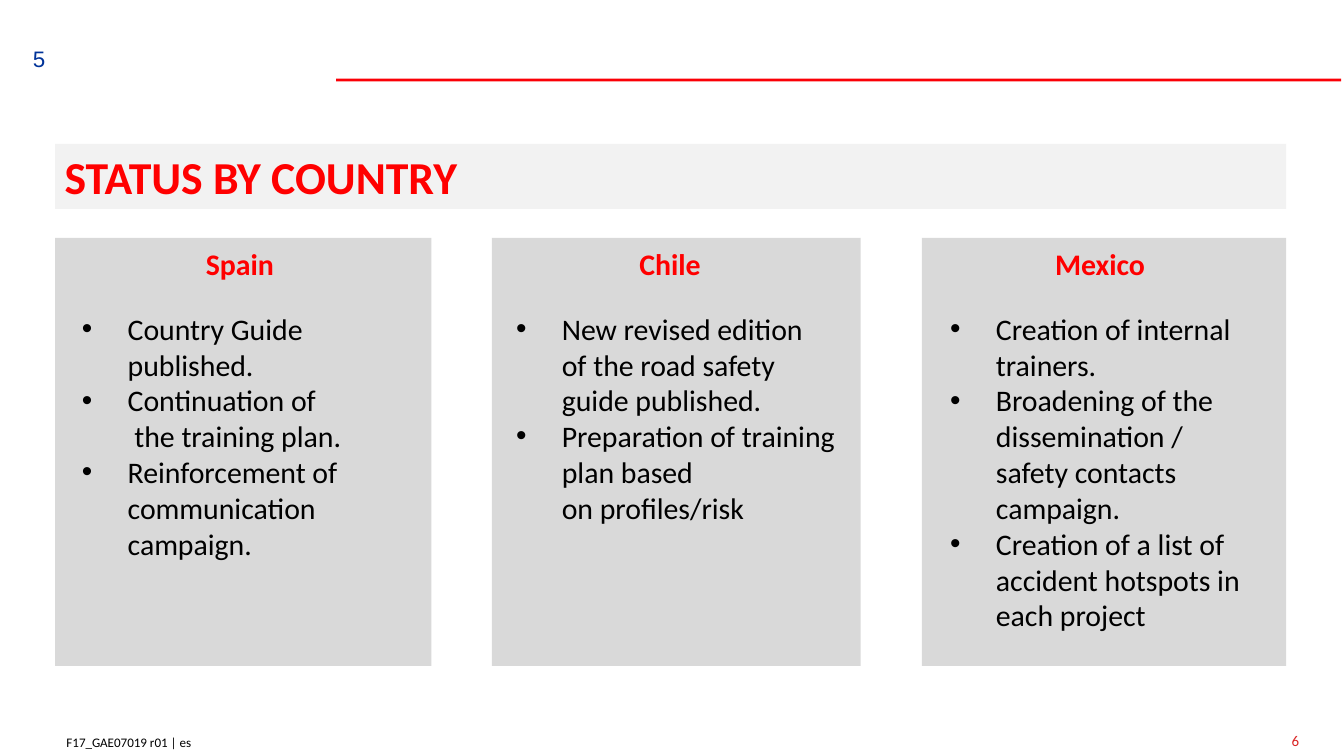
"""Builds the slide on status by country: a title bar and three cards."""
from copy import deepcopy
from dataclasses import dataclass
from typing import Any

from lxml import etree
from pptx import Presentation
from pptx import util as u
from pptx.dml.color import RGBColor
from pptx.enum import shapes, text
from pptx.oxml.ns import qn

PX = 4572


@dataclass(frozen=True)
class Theme:
    red: str = "FF0000"
    rule: str = "FB0007"
    page: str = "DA2424"
    blue: str = "003399"
    ink: str = "000000"
    card: str = "D9D9D9"
    bar: str = "F2F2F2"
    font: str = "Calibri"
    sans: str = "Arial"
    title: float = 24.5
    body: float = 16
    mark: float = 12
    num: float = 8
    foot: float = 7


@dataclass(frozen=True)
class Box:
    x: int
    y: int
    w: int
    h: int


@dataclass(frozen=True)
class Card:
    name: str
    box: Box
    wide: int
    tall: int
    slot: int
    items: tuple[str, ...]


T = Theme()
LEFT = text.PP_ALIGN.LEFT
RIGHT = text.PP_ALIGN.RIGHT
MID = text.PP_ALIGN.CENTER

CARDS = (
    Card("Spain", Box(82, 354, 560, 637), 520, 398, 1, (
        "Country Guide published.",
        "Continuation of\v the training plan.",
        "Reinforcement of communication campaign.")),
    Card("Chile", Box(732, 354, 549, 637), 522, 344, 2, (
        "New revised edition\vof the road safety guide published.",
        "Preparation of training plan based\von profiles/risk")),
    Card("Mexico", Box(1372, 354, 542, 637), 498, 504, 4, (
        "Creation of internal trainers.",
        "Broadening of the dissemination /\vsafety contacts campaign.",
        "Creation of a list of accident hotspots in each project")),
)


def place(shape: Any, box: Box) -> None:
    """Move and size a shape."""
    shape.left, shape.top = box.x * PX, box.y * PX
    shape.width, shape.height = box.w * PX, box.h * PX


def paint(shape: Any, color: str) -> None:
    """Give a shape a solid fill."""
    shape.fill.solid()
    shape.fill.fore_color.rgb = RGBColor.from_string(color)


def block(slide: Any, box: Box, color: str) -> None:
    """Draw a plain filled rectangle."""
    shape = slide.shapes.add_shape(shapes.MSO_SHAPE.RECTANGLE, 0, 0, 0, 0)
    place(shape, box)
    paint(shape, color)
    shape.line.fill.background()
    shape.shadow.inherit = False


def bullet(para: Any, indent: int) -> None:
    """Give a paragraph a hanging round bullet."""
    props = para._p.get_or_add_pPr()
    props.set("marL", str(indent * PX))
    props.set("indent", str(-indent * PX))
    etree.SubElement(props, qn("a:buFont"), typeface="Arial")
    etree.SubElement(props, qn("a:buChar"), char="•")


def write(shape: Any, *lines: str, size: float = T.body, color: str = T.ink,
          bold: bool = False, font: str = T.font, align: Any = LEFT,
          pad: tuple[int, int] = (20, 10), indent: int = 0) -> None:
    """Fill a shape with formatted paragraphs."""
    frame = shape.text_frame
    frame.word_wrap = True
    frame.auto_size = text.MSO_AUTO_SIZE.NONE
    frame.vertical_anchor = text.MSO_ANCHOR.TOP
    frame.margin_left = frame.margin_right = pad[0] * PX
    frame.margin_top = frame.margin_bottom = pad[1] * PX
    for i, line in enumerate(lines):
        para = frame.add_paragraph() if i else frame.paragraphs[0]
        para.text = line
        para.alignment = align
        para.line_spacing = 1.0
        para.space_before = para.space_after = u.Pt(0)
        if indent:
            bullet(para, indent)
        for run in para.runs:
            run.font.size = u.Pt(size)
            run.font.name = font
            run.font.bold = bold
            run.font.color.rgb = RGBColor.from_string(color)
        for brk in para._p.findall(qn("a:br")):
            brk.append(deepcopy(para.runs[0]._r.rPr))


def label(slide: Any, box: Box, words: str, **style: Any) -> None:
    """Add a text box with one formatted line."""
    shape = slide.shapes.add_textbox(0, 0, 0, 0)
    place(shape, box)
    write(shape, words, **style)


def column(slide: Any, i: int, card: Card) -> None:
    """Draw a country card with its heading and list."""
    block(slide, card.box, T.card)
    label(slide, Box(192 + 640 * i, 356, 330, 74), card.name,
          color=T.red, bold=True, align=MID)
    body = next(p for p in slide.placeholders
                if p.placeholder_format.idx == card.slot)
    place(body, Box(102 + 646 * i, 452, card.wide, card.tall))
    write(body, *card.items, indent=68)
    slide.shapes._spTree.append(body._element)


def main() -> None:
    """Build and save the slide."""
    deck = Presentation()
    deck.slide_width, deck.slide_height = 2000 * PX, 1125 * PX
    slide = deck.slides.add_slide(deck.slide_layouts[4])
    label(slide, Box(0, 1083, 304, 44), "F17_GAE07019 r01 | es",
          size=T.foot, align=RIGHT)
    block(slide, Box(500, 117, 1496, 4), T.rule)
    label(slide, Box(1914, 1081, 204, 44), "6", size=T.num,
          color=T.page, pad=(8, 8))
    label(slide, Box(17, 58, 70, 60), "5", size=T.mark, color=T.blue,
          font=T.sans, align=RIGHT)
    for i, card in enumerate(CARDS):
        column(slide, i, card)
    title = slide.shapes.title
    place(title, Box(82, 214, 1832, 97))
    paint(title, T.bar)
    write(title, "STATUS BY COUNTRY", size=T.title, color=T.red,
          bold=True, pad=(14, 7))
    slide.shapes._spTree.append(title._element)
    for spare in list(slide.placeholders):
        if not spare.text_frame.text:
            slide.shapes._spTree.remove(spare._element)
    deck.save("out.pptx")


if __name__ == "__main__":
    main()
